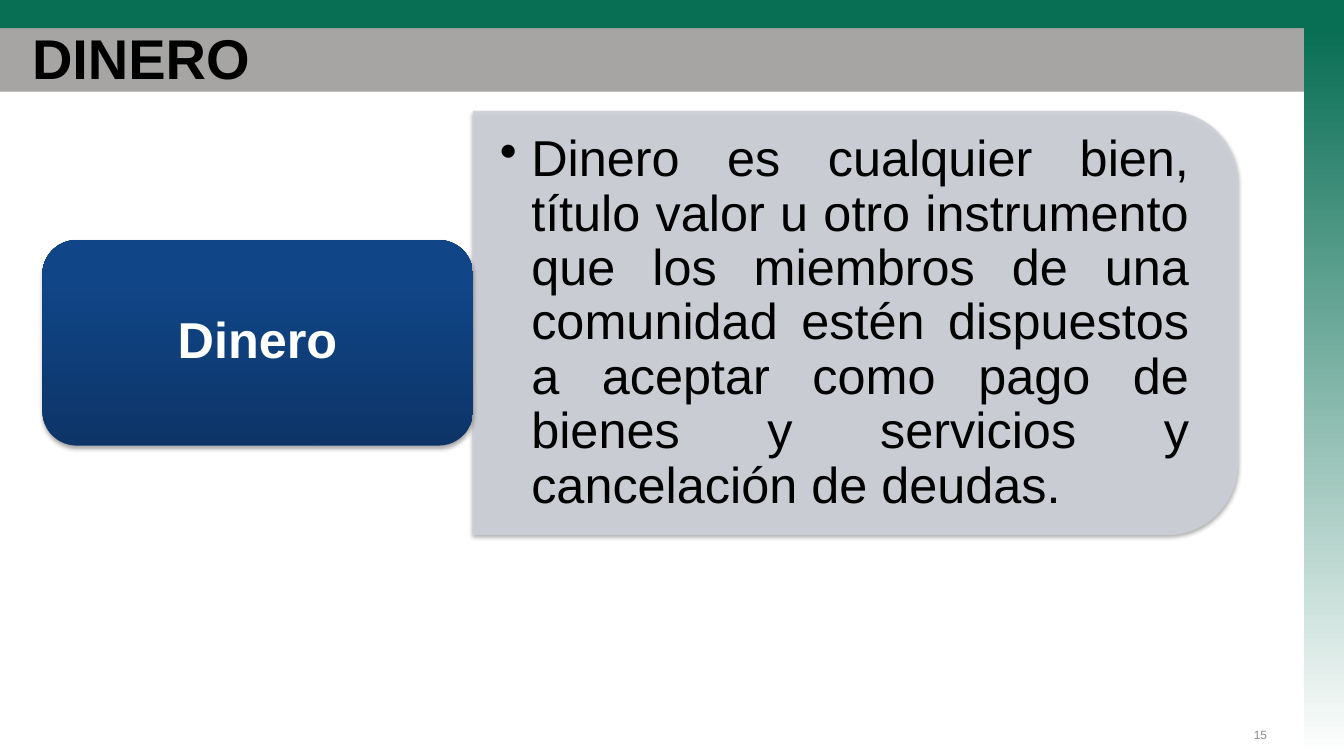
from lxml import etree
from pptx import Presentation
from pptx import util as u
from pptx.dml.color import RGBColor
from pptx.enum import shapes, text
from pptx.oxml import parse_xml
from pptx.oxml.ns import nsdecls, qn

COLORS = {
    "green": "086E54", "gray": "A6A5A4", "white": "FFFFFF", "black": "000000",
    "number": "8C8C8C", "panel": "CDD0D7",
    "navy": "0D3568", "blue": "104587", "bright": "0E458A",
}
KINDS = shapes.MSO_SHAPE
ALIGN = text.PP_ALIGN


def add_block(kind, box, stops, angle=0, shadow=False):
    """Add a borderless shape; stops lists (percent, color, alpha percent)."""
    s = slide.shapes.add_shape(kind, *[u.Cm(v) for v in box])
    s.line.fill.background()
    s.shadow.inherit = False
    fills = [
        f'<a:srgbClr val="{COLORS[c]}"><a:alpha val="{a * 1000}"/></a:srgbClr>'
        for _, c, a in stops
    ]
    if len(stops) == 1:
        xml = f'<a:solidFill {nsdecls("a")}>{fills[0]}</a:solidFill>'
    else:
        marks = "".join(f'<a:gs pos="{stop[0] * 1000}">{fill}</a:gs>'
                        for stop, fill in zip(stops, fills))
        xml = (f'<a:gradFill {nsdecls("a")} rotWithShape="1"><a:gsLst>{marks}</a:gsLst>'
               f'<a:lin ang="{angle * 60000}" scaled="0"/></a:gradFill>')
    props = s.element.spPr
    props.find(qn("a:prstGeom")).addnext(parse_xml(xml))
    if shadow:
        props.find(qn("a:effectLst")).append(parse_xml(
            f'<a:outerShdw {nsdecls("a")} blurRad="39370" dist="22860" dir="5400000" '
            'rotWithShape="0"><a:srgbClr val="000000"><a:alpha val="35000"/>'
            '</a:srgbClr></a:outerShdw>'))
    return s


def add_text(box, words, size, color, align, bold=False, insets=(0.25, 0.13)):
    s = slide.shapes.add_textbox(*[u.Cm(v) for v in box])
    tf = s.text_frame
    tf.word_wrap = True
    tf.vertical_anchor = text.MSO_ANCHOR.MIDDLE
    tf.margin_left = tf.margin_right = u.Cm(insets[0])
    tf.margin_top = tf.margin_bottom = u.Cm(insets[1])
    p = tf.paragraphs[0]
    p.text = words
    p.alignment = align
    font = p.runs[0].font
    font.name, font.size, font.bold = "Arial", u.Pt(size), bold
    font.color.rgb = RGBColor.from_string(COLORS[color])
    return p


prs = Presentation()
prs.slide_width, prs.slide_height = u.Cm(33.87), u.Cm(19.05)
slide = prs.slides.add_slide(prs.slide_layouts[6])

# Frame, title and page number
add_block(KINDS.RECTANGLE, (0, 0.71, 33.87, 1.6), [(0, "gray", 100)])
add_block(KINDS.RECTANGLE, (0, 0, 33.87, 0.71), [(0, "green", 100)])
add_block(KINDS.RECTANGLE, (32.86, 0.71, 1.01, 18.34),
          [(0, "green", 100), (100, "white", 100)], 90)
add_text((30.2, 18, 1.98, 1.02), "15", 8.5, "number", ALIGN.RIGHT)
add_text((0.56, 0.76, 32.18, 1.35), "DINERO", 40, "black", ALIGN.LEFT, bold=True)

# Definition panel
panel = add_block(KINDS.ROUND_2_SAME_RECTANGLE, (16.21, -1.5, 10.69, 19.28),
                  [(0, "panel", 90)], shadow=True)
panel.rotation = 90
p = add_text(
    (11.91, 3.33, 18.75, 9.65),
    "Dinero es cualquier bien, título valor u otro instrumento que los miembros "
    "de una comunidad estén dispuestos a aceptar como pago de bienes y servicios "
    "y cancelación de deudas.",
    36, "black", ALIGN.JUSTIFY, insets=(0.69, 0.36))
p.line_spacing = 0.9
props = p._p.get_or_add_pPr()
props.set("marL", str(u.Cm(0.79)))
props.set("indent", str(u.Cm(-0.79)))
etree.SubElement(props, qn("a:buChar")).set("char", "•")

# Term being defined
add_block(KINDS.ROUNDED_RECTANGLE, (1.07, 6.05, 10.85, 5.18),
          [(0, "navy", 100), (80, "blue", 100), (100, "bright", 100)], 270, shadow=True)
p = add_text((1.32, 6.3, 10.34, 4.67), "Dinero", 36, "white", ALIGN.CENTER,
             bold=True, insets=(0.38, 0.18))
p.line_spacing = 0.9

prs.save("out.pptx")
